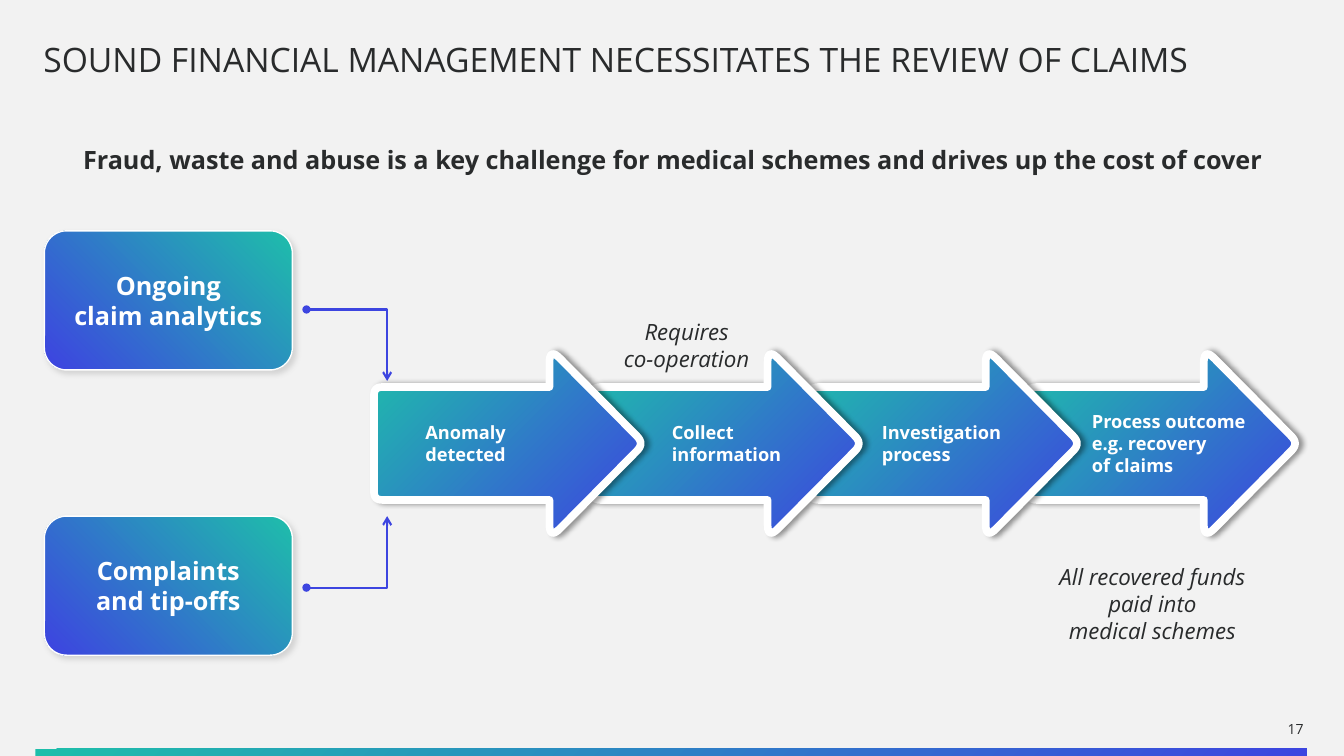
from dataclasses import dataclass

from lxml import etree
from pptx import Presentation
from pptx import util as u
from pptx.dml.color import RGBColor
from pptx.enum import shapes, text
from pptx.oxml import ns

Inches = u.Inches
LEFT, CENTER, RIGHT = text.PP_ALIGN.LEFT, text.PP_ALIGN.CENTER, text.PP_ALIGN.RIGHT


@dataclass(frozen=True)
class Theme:
    font: str = "Open Sans"
    ink: str = "292B2C"
    white: str = "FFFFFF"
    paper: str = "F2F2F2"
    teal: str = "1EBEAA"
    blue: str = "3D45E0"
    gray: str = "A6A6A6"
    black: str = "000000"
    title: int = 24
    heading: int = 18
    note: int = 16
    step: int = 13
    number: int = 10


THEME = Theme()


def rgb(color):
    return RGBColor.from_string(color)


def add_xml(parent, tag, **attributes):
    return etree.SubElement(parent, ns.qn(tag), attributes)


def write(shape, words, size, color=THEME.ink, align=CENTER, insets=(0, 0, 0, 0), bold=False, italic=False):
    frame = shape.text_frame
    frame.text = words
    frame.word_wrap = True
    frame.auto_size = text.MSO_AUTO_SIZE.NONE
    frame.vertical_anchor = text.MSO_ANCHOR.MIDDLE
    frame.margin_left, frame.margin_top, frame.margin_right, frame.margin_bottom = map(Inches, insets)
    for paragraph in frame.paragraphs:
        paragraph.alignment = align
        for run in paragraph.runs:
            font = run.font
            font.name, font.size, font.bold, font.italic = THEME.font, u.Pt(size), bold, italic
            font.color.rgb = rgb(color)


def add_text(slide, box, words, size, **style):
    write(slide.shapes.add_textbox(*map(Inches, box)), words, size, **style)


def fill_gradient(shape, angle, end=0.98):
    shape.fill.gradient()
    shape.fill.gradient_angle = angle
    for stop, color, position in zip(shape.fill.gradient_stops, (THEME.teal, THEME.blue), (0, end)):
        stop.color.rgb = rgb(color)
        stop.position = position


def set_line(shape, color, width):
    shape.line.color.rgb = rgb(color)
    shape.line.width = u.Pt(width)
    line = shape.line.fill._xPr
    add_xml(line, "a:round")
    return line


def add_shadow(shape, color, direction):
    shape.shadow.inherit = False
    effects = shape._element.spPr.find(ns.qn("a:effectLst"))
    shadow = add_xml(effects, "a:outerShdw", blurRad=str(u.Pt(4)), dist=str(u.Pt(3)),
                     dir=str(direction * 60000), algn="tl", rotWithShape="0")
    add_xml(add_xml(shadow, "a:srgbClr", val=color), "a:alpha", val="40000")


def draw_path(shape_tree, points, close):
    points = [(Inches(x), Inches(y)) for x, y in points]
    builder = shape_tree.build_freeform(*points[0])
    builder.add_line_segments(points[1:], close=close)
    return builder.convert_to_shape()


def round_corners(corners, steps=8):
    """Replace each (x, y, cut) corner by points on a quadratic curve."""
    points = []
    for index, (x, y, cut) in enumerate(corners):
        if not cut:
            points.append((x, y))
            continue
        ends = []
        for other_x, other_y, _ in (corners[index - 1], corners[(index + 1) % len(corners)]):
            length = ((other_x - x) ** 2 + (other_y - y) ** 2) ** 0.5
            ends.append((x + (other_x - x) * cut / length, y + (other_y - y) * cut / length))
        for step in range(steps + 1):
            t = step / steps
            points.append(tuple((1 - t) ** 2 * start + 2 * t * (1 - t) * middle + t ** 2 * end
                                for start, middle, end in zip(ends[0], (x, y), ends[1])))
    return points


def add_title(slide, box, words):
    title = slide.shapes.title
    title.left, title.top, title.width, title.height = map(Inches, box)
    write(title, words, THEME.title, align=LEFT)
    title.text_frame.paragraphs[0].line_spacing = 0.9


def add_footer(slide, box, number):
    left, top, width, height = box
    bar = slide.shapes.add_shape(shapes.MSO_SHAPE.RECTANGLE, *map(Inches, box))
    bar.shadow.inherit = False
    bar.line.fill.background()
    fill_gradient(bar, 315, end=1)
    add_text(slide, (left + width - 0.34, top - 0.28, 0.31, 0.17), number, THEME.number, align=RIGHT)


def add_source(slide, box, words):
    card = slide.shapes.add_shape(shapes.MSO_SHAPE.ROUNDED_RECTANGLE, *map(Inches, box))
    card.adjustments[0] = 0.16
    fill_gradient(card, 225)
    set_line(card, THEME.white, 1)
    add_shadow(card, THEME.gray, 45)
    write(card, words, THEME.heading, color=THEME.white, insets=[0.12] * 4, bold=True)


def add_elbow(slide, box, upward):
    left, top, width, height = box
    start, end = (top + height, top) if upward else (top, top + height)
    elbow = draw_path(slide.shapes, [(left, start), (left + width, start), (left + width, end)], False)
    elbow.fill.background()
    elbow.shadow.inherit = False
    line = set_line(elbow, THEME.blue, 1.5)
    add_xml(line, "a:headEnd", type="oval", w="med", len="med")
    add_xml(line, "a:tailEnd", type="arrow", w="med", len="med")


def add_step(group, box, words, indent):
    left, top, width, height = box
    right, bottom = left + width, top + height
    neck = left + 1.74
    body_top, body_bottom = top + 0.32, bottom - 0.32
    outline = round_corners([
        (left, body_top, 0.08), (neck, body_top, 0), (neck, top - 0.07, 0.15),
        (right + 0.04, top + height / 2, 0.1),
        (neck, bottom + 0.07, 0.15), (neck, body_bottom, 0), (left, body_bottom, 0.08)])
    arrow = draw_path(group.shapes, outline, True)
    fill_gradient(arrow, 315)
    set_line(arrow, THEME.white, 5.5)
    add_shadow(arrow, THEME.black, 0)
    write(arrow, words, THEME.step, color=THEME.white, align=LEFT,
          insets=(indent, 0.04, 0.04, 0.04), bold=True)


def add_process(slide, box, steps):
    left, top, width, height = box
    arrow_width = 2.64
    pitch = (width - arrow_width) / (len(steps) - 1)
    group = slide.shapes.add_group_shape()
    # Earlier arrows overlap later ones
    for index, (words, indent) in reversed(list(enumerate(steps))):
        add_step(group, (left + index * pitch, top, arrow_width, height), words, indent)


def main():
    presentation = Presentation()
    presentation.slide_width, presentation.slide_height = Inches(13.33), Inches(7.5)
    slide = presentation.slides.add_slide(presentation.slide_layouts[5])
    slide.background.fill.solid()
    slide.background.fill.fore_color.rgb = rgb(THEME.paper)

    # Footer, title and key message
    add_footer(slide, (0.35, 7.43, 12.61, 0.08), "17")
    add_title(slide, (0.43, 0.43, 12.49, 0.37),
              "SOUND FINANCIAL MANAGEMENT NECESSITATES THE REVIEW OF CLAIMS")
    add_text(slide, (0.43, 1.4, 12.49, 0.37),
             "Fraud, waste and abuse is a key challenge for medical schemes and drives up the cost of cover",
             THEME.heading, insets=(0.04, 0.08, 0.04, 0.08), bold=True)

    # Notes around the process
    for box, words in [((6, 3.07, 1.62, 0.71), "Requires\nco-operation"),
                       ((10.2, 5.48, 2.46, 1.01), "All recovered funds\vpaid into\vmedical schemes")]:
        add_text(slide, box, words, THEME.note, insets=[0.04] * 4, italic=True)

    # Sources feeding the process
    for top, elbow_top, upward, words in [(2.29, 3.07, False, "Ongoing\vclaim analytics"),
                                          (5.12, 5.12, True, "Complaints\vand tip-offs")]:
        add_source(slide, (0.44, top, 2.46, 1.38), words)
        add_elbow(slide, (3.04, elbow_top, 0.8, 0.71), upward)

    # Process arrows
    add_process(slide, (3.71, 3.52, 9.13, 1.76), [
        ("Anomaly\vdetected", 0.51), ("Collect\vinformation", 0.79),
        ("Investigation\vprocess", 0.71), ("Process outcome\ve.g. recovery\vof claims", 0.63)])

    presentation.save("out.pptx")


if __name__ == "__main__":
    main()
